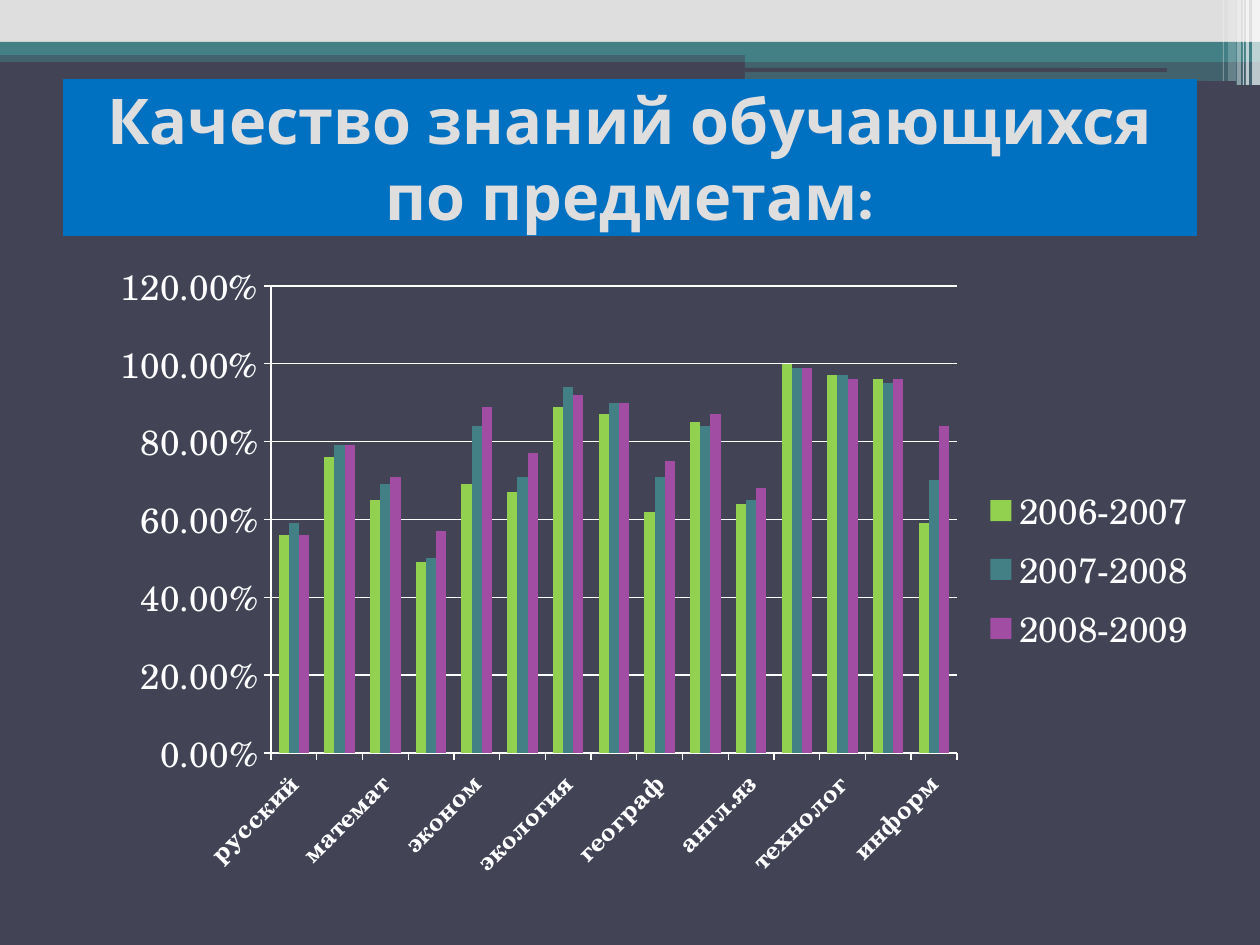
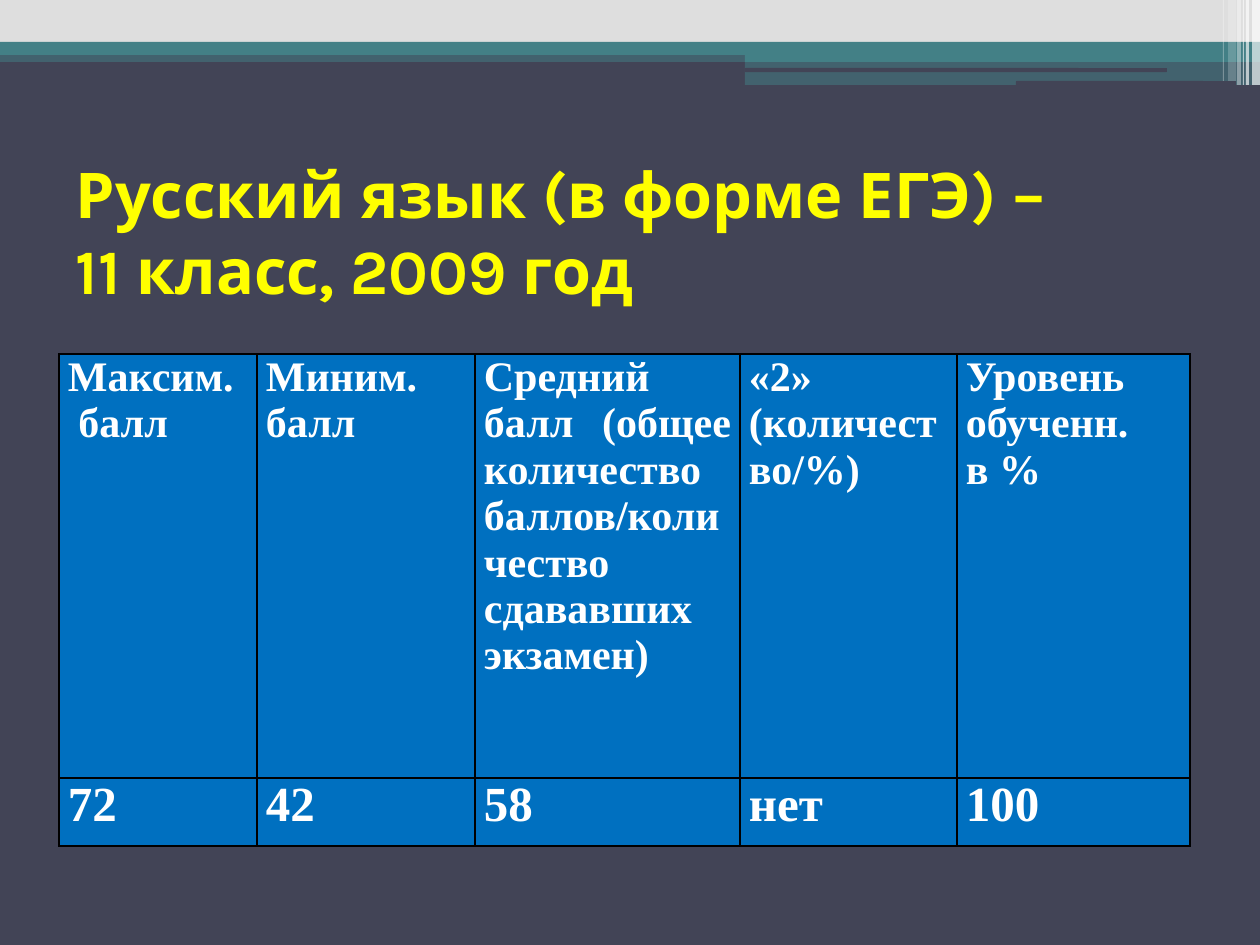
from lxml import etree
from pptx import Presentation
from pptx.chart.data import CategoryChartData
from pptx.dml.color import RGBColor
from pptx.enum.chart import XL_CHART_TYPE as ChartType
from pptx.enum.chart import XL_LEGEND_POSITION as LegendPosition
from pptx.enum.chart import XL_TICK_MARK as TickMark
from pptx.enum.shapes import MSO_SHAPE as Shape
from pptx.enum.text import MSO_ANCHOR as Anchor
from pptx.enum.text import MSO_AUTO_SIZE as AutoSize
from pptx.enum.text import PP_ALIGN as Align
from pptx.oxml.ns import qn
from pptx.util import Emu, Pt

PX = 914400 / 126
DARK, TEAL, PALE, WHITE = "424456", "438086", "DEDEDE", "FFFFFF"
BLUE, YELLOW, BLACK = "0070C0", "FFFF00", "000000"
TITLE_FONT, CHART_FONT, TABLE_FONT = "Karla", "TeX Gyre Schola", "Times New Roman"

# left, top, width, height, colour, opacity in percent
BANDS = [
    (0, 50, 1260, 12, TEAL, 50),
    (0, 0, 1260, 42, PALE, 100),
    (0, 42, 1260, 13, TEAL, 100),
    (745, 49, 515, 13, TEAL, 100),
    (745, 61, 515, 24, TEAL, 50),
]
GROOVES = [(745, 68, 422, 4, DARK, 100), (1016, 81, 220, 5, DARK, 100)]
STRIPES = [
    (1252, 0, 8, 85, WHITE, 65),
    (1246, 0, 3, 85, WHITE, 65),
    (1243, 0, 1, 85, WHITE, 60),
    (1237, 0, 4, 85, WHITE, 40),
    (1228, 0, 8, 81, WHITE, 20),
    (1223, 0, 1, 81, WHITE, 30),
]

QUALITY_TITLE = "Качество знаний обучающихся по предметам:"
CHART_BOX = (98, 246, 1113, 646)
PLOT_BOX = (271, 286, 686, 467)
LEGEND_BOX = (978, 478, 223, 183)
SUBJECTS = ["русский", "литерат", "математ", "химия", "эконом", "история", "экология",
            "биология", "географ", "ОБЖ", "англ.яз", "музыка", "технолог", "физ-ра",
            "информ"]
YEARS = [
    ("2006-2007", "92D050", [0.56, 0.76, 0.65, 0.49, 0.69, 0.67, 0.89, 0.87, 0.62,
                             0.85, 0.64, 1, 0.97, 0.96, 0.59]),
    ("2007-2008", TEAL, [0.59, 0.79, 0.69, 0.5, 0.84, 0.71, 0.94, 0.9, 0.71,
                         0.84, 0.65, 0.99, 0.97, 0.95, 0.7]),
    ("2008-2009", "A04DA3", [0.56, 0.79, 0.71, 0.57, 0.89, 0.77, 0.92, 0.9, 0.75,
                             0.87, 0.68, 0.99, 0.96, 0.96, 0.84]),
]

EXAM_TITLE = "Русский язык (в форме ЕГЭ) –\v11 класс, 2009 год"
EXAM_COLUMNS = [  # width, heading, result
    (198, "Максим.\n балл", "72"),
    (218, "Миним.\nбалл", "42"),
    (265, "Средний балл (общее количество баллов/количество сдававших экзамен)", "58"),
    (217, "«2»\n(количество/%)", "нет"),
    (233, "Уровень обученн.\nв %", "100"),
]
EXAM_ROWS = [(424, 24), (68, 28)]  # height, text size


def px(*lengths):
    return [Emu(round(length * PX)) for length in lengths]


def rgb(colour):
    return RGBColor.from_string(colour)


def paint(fill, colour):
    fill.solid()
    fill.fore_color.rgb = rgb(colour)


def set_font(font, name, size, colour, bold=False):
    font.name, font.size, font.bold = name, Pt(size), bold
    font.color.rgb = rgb(colour)


def add_child(parent, tag, **attributes):
    return etree.SubElement(parent, qn(tag), attributes)


def add_band(slide, kind, left, top, width, height, colour, opacity):
    band = slide.shapes.add_shape(kind, *px(left, top, width, height))
    band.shadow.inherit = False
    band.line.fill.background()
    paint(band.fill, colour)
    if opacity < 100:
        colour_element = next(band._element.spPr.iter(qn("a:srgbClr")))
        add_child(colour_element, "a:alpha", val=str(opacity * 1000))
    return band


def decorate_master(presentation, slide):
    """Draw the shared bands on a slide, then move them behind the master's placeholders."""
    master = presentation.slide_master
    paint(master.background.fill, DARK)
    groups = [(Shape.RECTANGLE, BANDS), (Shape.ROUNDED_RECTANGLE, GROOVES),
              (Shape.RECTANGLE, STRIPES)]
    bands = [add_band(slide, kind, *part) for kind, parts in groups for part in parts]
    for index, band in enumerate(bands, start=2):
        master.shapes._spTree.insert(index, band._element)


def set_title(slide, text, box, colour, align):
    title = slide.shapes.title
    title.left, title.top, title.width, title.height = px(*box)
    frame = title.text_frame
    frame.text = text
    frame.word_wrap = True
    frame.auto_size = AutoSize.NONE
    frame.vertical_anchor = Anchor.MIDDLE
    paragraph = frame.paragraphs[0]
    paragraph.alignment = align
    set_font(paragraph.font, TITLE_FONT, 36, colour, True)
    return title


def make_layout(box, inner=False):
    """Chart layout: a box on the slide, turned into fractions of the chart."""
    chart_left, chart_top, chart_width, chart_height = CHART_BOX
    left, top, width, height = box
    fractions = {
        "x": (left - chart_left) / chart_width,
        "y": (top - chart_top) / chart_height,
        "w": width / chart_width,
        "h": height / chart_height,
    }
    layout = etree.Element(qn("c:layout"))
    manual = add_child(layout, "c:manualLayout")
    if inner:
        add_child(manual, "c:layoutTarget", val="inner")
    for mode in ("xMode", "yMode"):
        add_child(manual, f"c:{mode}", val="edge")
    for name, value in fractions.items():
        add_child(manual, f"c:{name}", val=str(value))
    return layout


def style_axis(axis, size, bold=False):
    axis.major_tick_mark = TickMark.OUTSIDE
    paint(axis.format.line.fill, WHITE)
    set_font(axis.tick_labels.font, CHART_FONT, size, WHITE, bold)


def add_quality_chart(slide):
    data = CategoryChartData(number_format="0.00%")
    data.categories = SUBJECTS
    for year, _, values in YEARS:
        data.add_series(year, values)
    chart = slide.shapes.add_chart(
        ChartType.COLUMN_CLUSTERED, *px(*CHART_BOX), data).chart
    set_font(chart.font, CHART_FONT, 10, WHITE)
    chart.has_title = False

    plot = chart.plots[0]
    plot.vary_by_categories = False
    plot.gap_width, plot.overlap = 150, 0
    for series, (_, colour, _) in zip(plot.series, YEARS):
        paint(series.format.fill, colour)

    subjects, percents = chart.category_axis, chart.value_axis
    style_axis(subjects, 14, True)
    style_axis(percents, 20)
    percents.minimum_scale, percents.maximum_scale, percents.major_unit = 0, 1.2, 0.2
    percents.tick_labels.number_format = "0.00%"
    percents.tick_labels.number_format_is_linked = False
    paint(percents.major_gridlines.format.line.fill, WHITE)
    subjects._element.find(f"{qn('c:txPr')}/{qn('a:bodyPr')}").set("rot", "-2700000")
    skip = etree.Element(qn("c:tickLblSkip"), val="2")
    subjects._element.find(qn("c:noMultiLvlLbl")).addprevious(skip)

    chart.has_legend = True
    legend = chart.legend
    legend.position = LegendPosition.RIGHT
    legend.include_in_layout = False
    set_font(legend.font, CHART_FONT, 20, WHITE)

    plot_area = next(chart._chartSpace.iter(qn("c:plotArea")))
    for parent in (plot_area, legend._element):
        for layout in parent.findall(qn("c:layout")):
            parent.remove(layout)
    plot_area.insert(0, make_layout(PLOT_BOX, inner=True))
    legend._element.find(qn("c:legendPos")).addnext(make_layout(LEGEND_BOX))


def add_borders(cell):
    properties = cell._tc.get_or_add_tcPr()
    for index, side in enumerate(("lnL", "lnR", "lnT", "lnB")):
        line = etree.Element(qn(f"a:{side}"), w=str(Pt(1)))
        add_child(add_child(line, "a:solidFill"), "a:srgbClr", val=BLACK)
        properties.insert(index, line)


def fill_cell(cell, text, size):
    cell.margin_left, cell.margin_right, cell.margin_top, cell.margin_bottom = px(9, 9, 0, 0)
    paint(cell.fill, BLUE)
    add_borders(cell)
    cell.text_frame.text = text
    for paragraph in cell.text_frame.paragraphs:
        paragraph.alignment = Align.JUSTIFY
        set_font(paragraph.font, TABLE_FONT, size, WHITE, True)


def add_exam_table(slide):
    width = sum(column[0] for column in EXAM_COLUMNS)
    height = sum(row[0] for row in EXAM_ROWS)
    table = slide.shapes.add_table(
        len(EXAM_ROWS), len(EXAM_COLUMNS), *px(59, 354, width, height)).table
    table.first_row = table.horz_banding = False
    for row, (row_height, _) in zip(table.rows, EXAM_ROWS):
        row.height = px(row_height)[0]
    for column, (column_width, *texts) in enumerate(EXAM_COLUMNS):
        table.columns[column].width = px(column_width)[0]
        for row, (text, (_, size)) in enumerate(zip(texts, EXAM_ROWS)):
            fill_cell(table.cell(row, column), text, size)


def main():
    presentation = Presentation()
    presentation.slide_width, presentation.slide_height = px(1260, 945)
    title_only = presentation.slide_layouts[5]

    quality_slide = presentation.slides.add_slide(title_only)
    decorate_master(presentation, quality_slide)
    title = set_title(quality_slide, QUALITY_TITLE, (63, 79, 1134, 157), PALE, Align.CENTER)
    paint(title.fill, BLUE)
    add_quality_chart(quality_slide)

    exam_slide = presentation.slides.add_slide(title_only)
    set_title(exam_slide, EXAM_TITLE, (63, 158, 1134, 147), YELLOW, Align.LEFT)
    add_exam_table(exam_slide)

    presentation.save("out.pptx")


if __name__ == "__main__":
    main()
